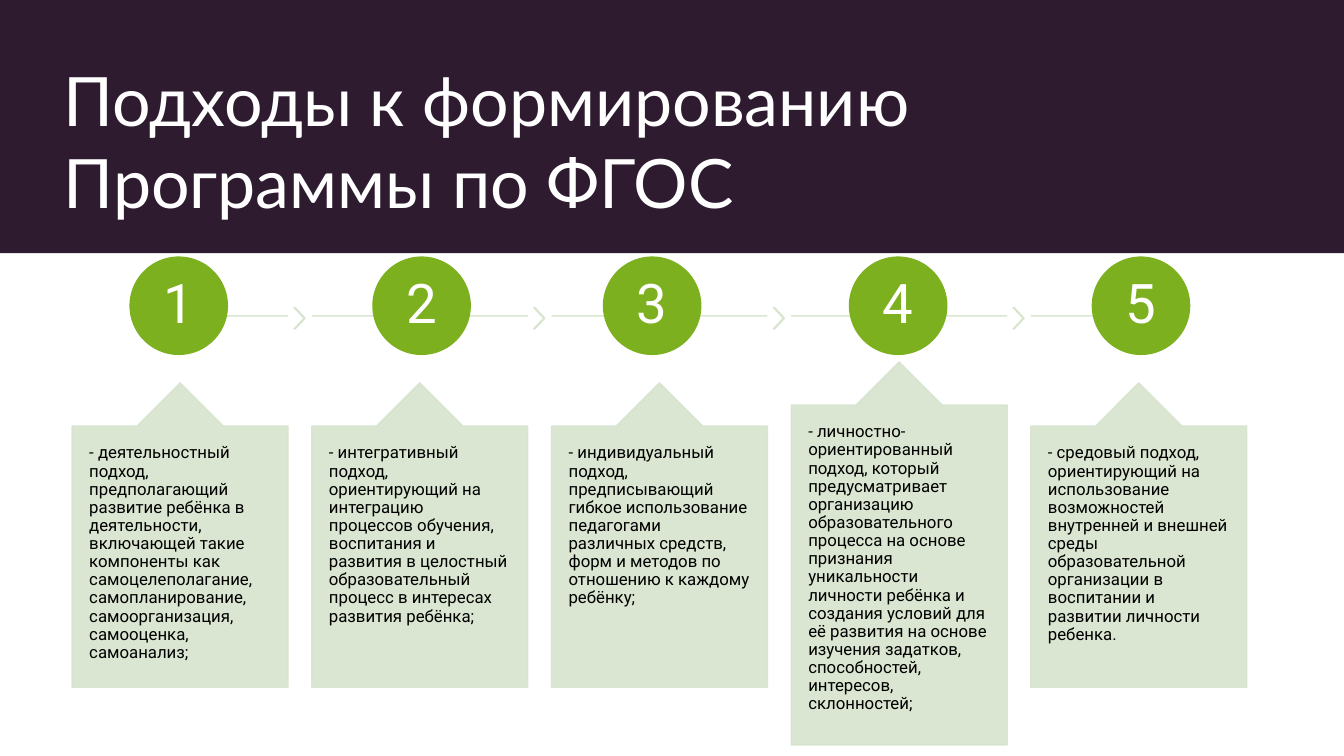
from dataclasses import dataclass

from lxml.etree import SubElement
from pptx import Presentation
from pptx.dml.color import RGBColor as Rgb
from pptx.enum.shapes import MSO_CONNECTOR as Link, MSO_SHAPE as Kind
from pptx.enum.text import MSO_ANCHOR as Anchor, MSO_AUTO_SIZE as Auto, PP_ALIGN as Align
from pptx.oxml.ns import qn
from pptx.util import Cm, Pt


@dataclass(frozen=True)
class Theme:
    dark: str = "2F1B30"
    green: str = "7DB01F"
    pale: str = "D7E4CD"
    white: str = "FFFFFF"
    black: str = "000000"
    head: str = "Lato"
    body: str = "Roboto"
    big: float = 48.6
    mid: float = 39
    small: float = 12


WIDE, HIGH = 33.87, 19.05
BAND = 6.38
LEFT, STEP, COL = 1.82, 6.04, 5.44
DISC, DISC_TOP = 2.45, 6.48
LINE_Y = 7.96
CARD = (9.65, 7.67)
TALL = (9.12, 9.65)

TITLE = "Подходы к формированию Программы по ФГОС"

# Disc left edge, line start and end within the column, card top and height, text
STEPS = [
    (3.28, (3.03, COL), CARD,
     "- деятельностный подход, предполагающий развитие ребёнка в деятельности, "
     "включающей такие компоненты как самоцелеполагание, самопланирование, "
     "самоорганизация, самооценка, самоанализ;"),
    (9.4, (0, COL), CARD,
     "- интегративный подход, ориентирующий на интеграцию процессов обучения, "
     "воспитания и развития в целостный образовательный процесс в интересах "
     "развития ребёнка;"),
    (15.21, (0, COL), CARD,
     "- индивидуальный подход, предписывающий гибкое использование педагогами "
     "различных средств, форм и методов по отношению к каждому ребёнку;"),
    (21.41, (0, COL), TALL,
     "- личностно-ориентированный подход, который предусматривает организацию "
     "образовательного процесса на основе признания уникальности личности ребёнка "
     "и создания условий для её развития на основе изучения задатков, "
     "способностей, интересов, склонностей;"),
    (27.53, (0, COL / 2), CARD,
     "- cредовый подход, ориентирующий на использование возможностей внутренней "
     "и внешней среды образовательной организации в воспитании и развитии "
     "личности ребенка."),
]


def fade(item):
    """Make every colour of the shape 90% opaque."""
    for tint in item._element.spPr.iter(qn("a:srgbClr")):
        SubElement(tint, qn("a:alpha")).set("val", "90000")


class Deck:
    def __init__(self, theme):
        self.theme = theme
        self.prs = Presentation()
        self.prs.slide_width, self.prs.slide_height = Cm(WIDE), Cm(HIGH)
        self.slide = self.prs.slides.add_slide(self.prs.slide_layouts[5])
        self.shapes = self.slide.shapes

    def shape(self, kind, box, color, adjust=()):
        item = self.shapes.add_shape(kind, *map(Cm, box))
        item.shadow.inherit = False
        item.fill.solid()
        item.fill.fore_color.rgb = Rgb.from_string(color)
        item.line.color.rgb = Rgb.from_string(color)
        item.line.width = Pt(1)
        for spot, value in enumerate(adjust):
            item.adjustments[spot] = value
        return item

    def label(self, item, text, font, size, color, align, anchor, pad, gap):
        frame = item.text_frame
        frame.text = text
        frame.word_wrap = True
        frame.auto_size = Auto.NONE
        frame.vertical_anchor = anchor
        frame.margin_left = frame.margin_right = Cm(pad[0])
        frame.margin_top = frame.margin_bottom = Cm(pad[1])
        para = frame.paragraphs[0]
        para.alignment = align
        para.line_spacing = gap
        face = para.runs[0].font
        face.name, face.size = font, Pt(size)
        face.color.rgb = Rgb.from_string(color)

    def title(self, text):
        look = self.theme
        band = self.shape(Kind.RECTANGLE, (0, 0, WIDE, BAND), look.dark)
        band.line.fill.background()
        item = self.shapes.title
        self.shapes._spTree.append(item._element)  # bring in front of the band
        item.left, item.top, item.width, item.height = map(Cm, (1.35, 1.02, 30.2, 4.7))
        self.label(item, text, look.head, look.big, look.white,
                   Align.LEFT, Anchor.BOTTOM, (0.25, 0.13), 1.0)

    def line(self, start, end):
        item = self.shapes.add_connector(
            Link.STRAIGHT, Cm(start), Cm(LINE_Y), Cm(end), Cm(LINE_Y))
        item.line.color.rgb = Rgb.from_string(self.theme.pale)
        item.line.width = Pt(1)
        SubElement(item._element.spPr, qn("a:effectLst"))
        fade(item)

    def arrow(self, left):
        fade(self.shape(Kind.CHEVRON, (left, 7.75, 0.28, 0.54), self.theme.pale, [0.9]))

    def disc(self, left, text):
        look = self.theme
        item = self.shape(Kind.OVAL, (left, DISC_TOP, DISC, DISC), look.green)
        self.label(item, text, look.body, look.mid, look.white,
                   Align.CENTER, Anchor.MIDDLE, (0.1, 0.1), 0.9)

    def card(self, left, top, high, text):
        look = self.theme
        item = self.shape(Kind.UP_ARROW_CALLOUT, (left, top, COL, high),
                          look.pale, [0.5, 0.2, 0.2, 1])
        fade(item)
        self.label(item, text, look.body, look.small, look.black,
                   Align.LEFT, Anchor.TOP, (0.43, 0.46), 0.9)


def main():
    deck = Deck(Theme())
    deck.title(TITLE)
    for num, (disc, (start, end), (top, high), text) in enumerate(STEPS):
        left = LEFT + num * STEP
        deck.line(left + start, left + end)
        if num < len(STEPS) - 1:
            deck.arrow(left + 5.59)
        deck.disc(disc, str(num + 1))
        deck.card(left, top, high, text)
    deck.prs.save("out.pptx")


if __name__ == "__main__":
    main()
